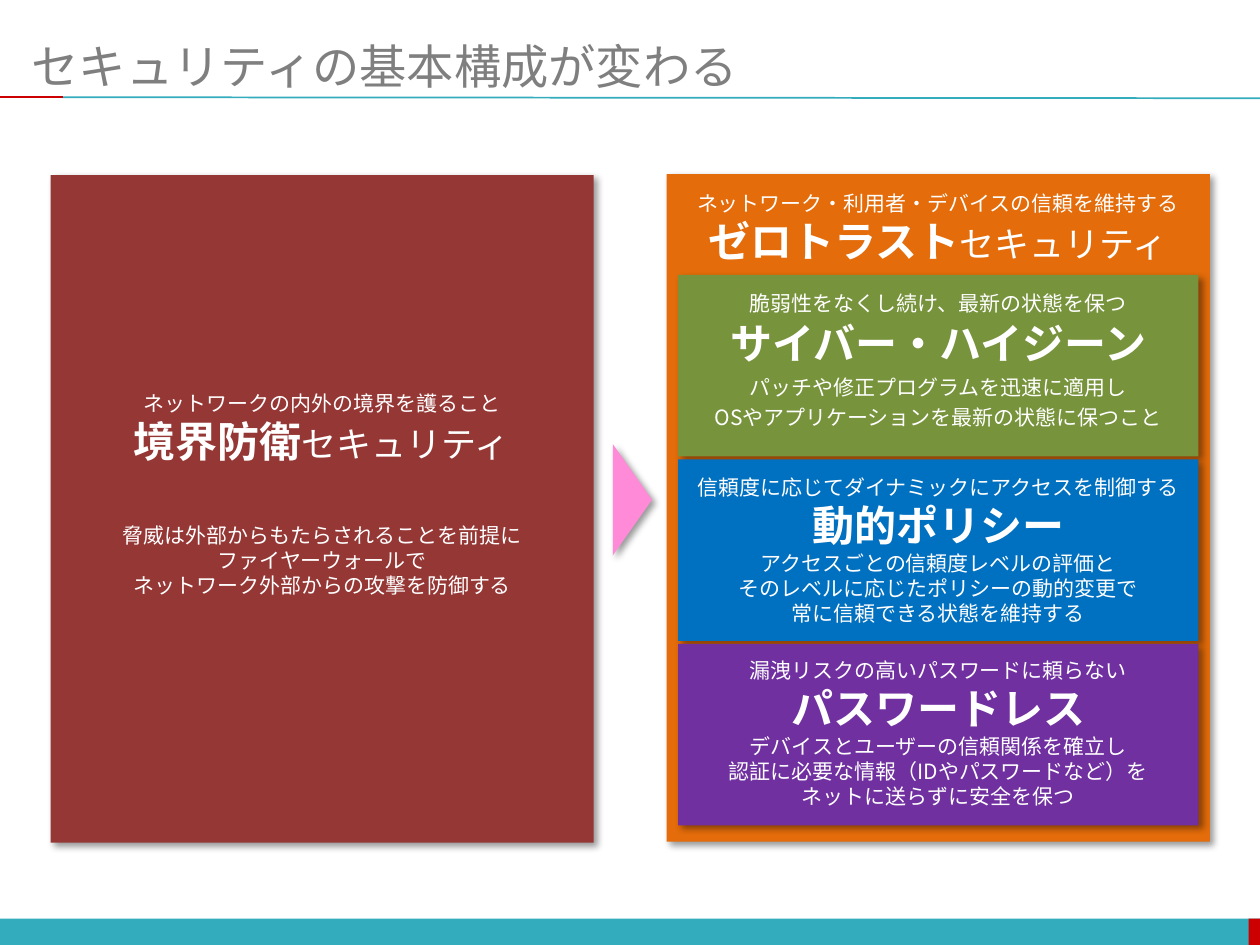
from lxml.etree import SubElement as Sub
from pptx import Presentation
from pptx.dml.color import RGBColor as RGB
from pptx.enum.shapes import MSO_CONNECTOR as LINE, MSO_SHAPE as SHAPE
from pptx.enum.text import MSO_ANCHOR as ANCHOR, PP_ALIGN as ALIGN
from pptx.oxml.ns import qn
from pptx.util import Cm, Pt

FONT = "Noto Sans CJK JP"
TEAL, RED = "33ACBD", "CC0000"

deck = Presentation()
deck.slide_width, deck.slide_height = Cm(25.4), Cm(19.05)
slide = deck.slides.add_slide(deck.slide_layouts[6])
shapes = slide.shapes


def block(area, color, shade=True, kind=SHAPE.RECTANGLE):
    """Add a filled shape without outline, with a soft shadow if shade is set."""
    shape = shapes.add_shape(kind, *map(Cm, area))
    shape.fill.solid()
    shape.fill.fore_color.rgb = RGB.from_string(color)
    shape.line.fill.background()
    shape.shadow.inherit = False
    if shade:
        effects = shape._element.spPr.find(qn("a:effectLst"))
        outer = Sub(effects, qn("a:outerShdw"), blurRad=str(Pt(4)), dist=str(Pt(3)),
                    dir="2700000", algn="tl", rotWithShape="0")
        black = Sub(outer, qn("a:srgbClr"), val="000000")
        Sub(black, qn("a:alpha"), val="40000")
    return shape


def label(area, lines, color="FFFFFF", align=ALIGN.CENTER, wrap=True):
    """Add a text box; each line is a list of (text, size) runs, bold at 24 pt."""
    frame = shapes.add_textbox(*map(Cm, area)).text_frame
    frame.word_wrap = wrap
    for i, line in enumerate(lines):
        para = frame.paragraphs[0] if i == 0 else frame.add_paragraph()
        para.alignment = align
        for text, size in line:
            run = para.add_run()
            run.text = text
            font = run.font
            font.name, font.size, font.bold = FONT, Pt(size), size == 24
            font.color.rgb = RGB.from_string(color)
            Sub(run._r.rPr, qn("a:ea"), typeface=FONT)
    return frame


# Footer bar and title rule
block((0, 18.52, 25.4, 0.55), TEAL, shade=False)
block((25.17, 18.52, 0.23, 0.55), RED, shade=False)
for left, right, end, color in [(1.27, 25.4, 1.98, TEAL), (0, 1.27, 1.96, RED)]:
    rule = shapes.add_connector(LINE.STRAIGHT, Cm(left), Cm(1.96), Cm(right), Cm(end))
    rule.line.color.rgb = RGB.from_string(color)
    rule.line.width = Pt(1)
    Sub(rule._element.spPr, qn("a:effectLst"))

title = label((0.64, 0.74, 24.13, 1.17), [[("セキュリティの基本構成が変わる", 27)]],
              "7F7F7F", ALIGN.LEFT)
title.vertical_anchor = ANCHOR.MIDDLE
title.margin_left = title.margin_right = 0

# Perimeter defence on the left, zero trust on the right
block((13.44, 3.51, 10.95, 13.46), "E46C0A")
block((1.02, 3.53, 10.95, 13.46), "953735")
heads = [
    ((2.39, 7.75, 8.2, 1.8), "ネットワークの内外の境界を護ること", "境界防衛"),
    ((13.74, 3.71, 10.34, 1.8), "ネットワーク・利用者・デバイスの信頼を維持する", "ゼロトラスト"),
]
for area, lead, name in heads:
    label(area, [[(lead, 12)], [(name, 24), ("セキュリティ", 20)]], wrap=False)

premise = ["脅威は外部からもたらされることを前提に", "ファイヤーウォールで",
           "ネットワーク外部からの攻撃を防御する"]
label((2.18, 10.41, 8.64, 1.8), [[(text, 12)] for text in premise], wrap=False)

arrow = block((11.63, 9.68, 2.24, 0.79), "FF8AD8", kind=SHAPE.ISOSCELES_TRIANGLE)
arrow.rotation = 90

# Three cards inside the zero trust panel
cards = [
    ("77933C", 0.07, "脆弱性をなくし続け、最新の状態を保つ", "サイバー・ハイジーン",
     ["パッチや修正プログラムを迅速に適用し",
      "OSやアプリケーションを最新の状態に保つこと"]),
    ("0070C0", 0.18, "信頼度に応じてダイナミックにアクセスを制御する", "動的ポリシー",
     ["アクセスごとの信頼度レベルの評価と",
      "そのレベルに応じたポリシーの動的変更で",
      "常に信頼できる状態を維持する"]),
    ("7030A0", 0.15, "漏洩リスクの高いパスワードに頼らない", "パスワードレス",
     ["デバイスとユーザーの信頼関係を確立し",
      "認証に必要な情報（IDやパスワードなど）を",
      "ネットに送らずに安全を保つ"]),
]
frames = []
for i, (color, inset, lead, name, body) in enumerate(cards):
    top = 5.54 + i * 3.72
    block((13.67, top, 10.49, 3.66), color)
    lines = [[(lead, 12)], [(name, 24)]] + [[(text, 12)] for text in body]
    frames.append(label((13.67, top + inset, 10.49, 3.33), lines))

# The first card has fewer lines, so it is set more loosely
loose = frames[0]
loose.margin_left = loose.margin_right = Cm(0.38)
loose.margin_top = loose.margin_bottom = Cm(0.3)
for para in loose.paragraphs:
    para.line_spacing = 0.9
    para.space_after = Pt(4.5)

deck.save("out.pptx")
